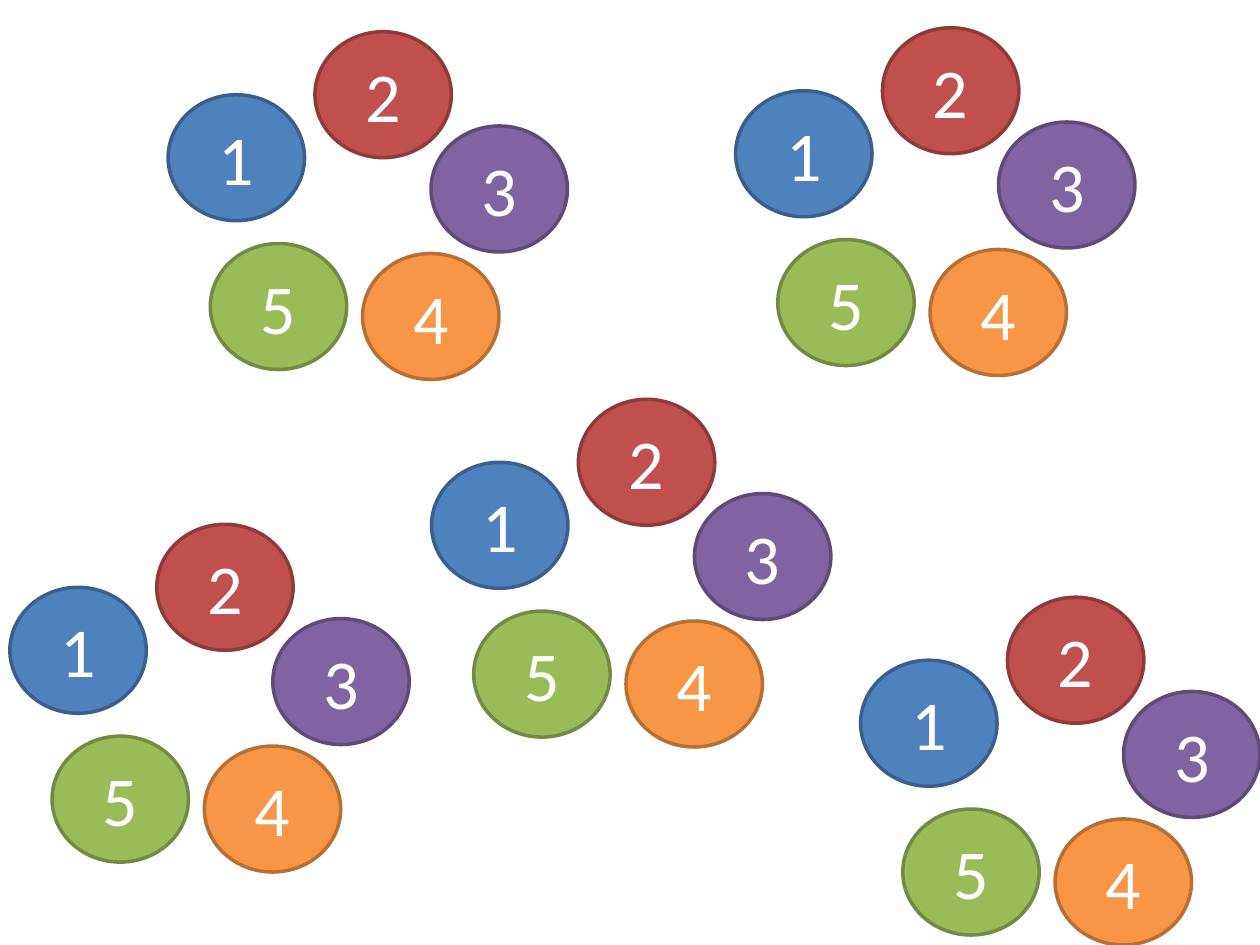
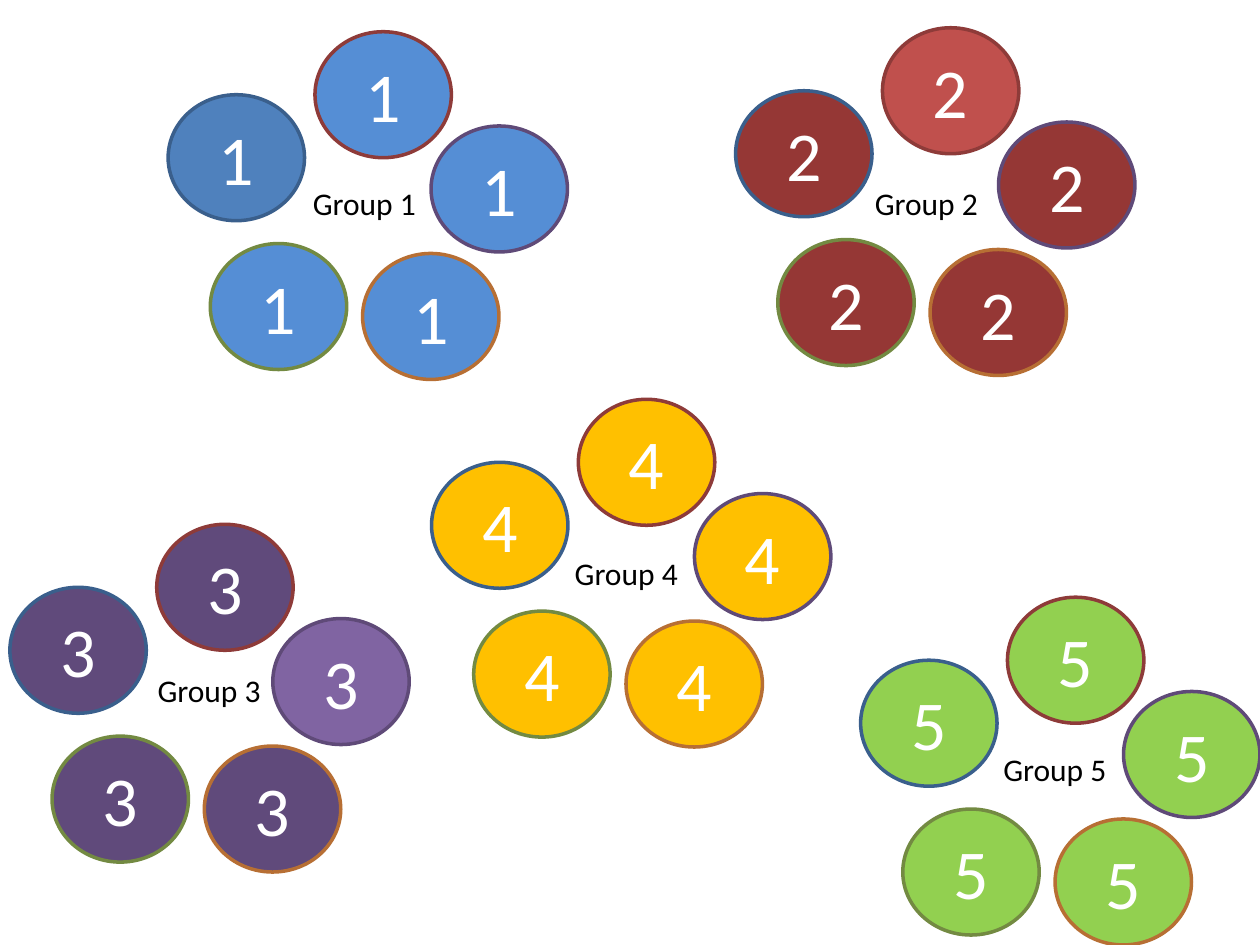
import pptx
import pptx.dml.color
import pptx.enum.shapes
import pptx.enum.text
import pptx.util

Cm = pptx.util.Cm
Pt = pptx.util.Pt

COLOURS = {
    "blue": "4F81BD", "red": "C0504D", "purple": "8064A2",
    "orange": "F79646", "green": "9BBB59",
    "blue rim": "3A5F8C", "red rim": "8E3B39", "purple rim": "5F4A78",
    "orange rim": "B76F34", "green rim": "738A42",
    "sky": "558ED5", "maroon": "953735", "plum": "604A7B",
    "amber": "FFC000", "lime": "92D050",
    "white": "FFFFFF", "black": "000000",
}
FONT = "Calibri"

MEMBERS = [
    {"number": 1, "colour": "blue", "offset": (0, 1.27)},
    {"number": 2, "colour": "red", "offset": (2.96, 0)},
    {"number": 3, "colour": "purple", "offset": (5.3, 1.9)},
    {"number": 4, "colour": "orange", "offset": (3.92, 4.47)},
    {"number": 5, "colour": "green", "offset": (0.85, 4.27)},
]
GROUPS = [
    {"number": 1, "corner": (3.39, 0.64), "label": (5.97, 3.58),
     "tint": "sky", "keeps_own": True},
    {"number": 2, "corner": (14.83, 0.56), "label": (17.3, 3.58),
     "tint": "maroon", "keeps_own": True},
    {"number": 3, "corner": (0.2, 10.57), "label": (2.84, 13.41),
     "tint": "plum", "keeps_own": True},
    {"number": 4, "corner": (8.7, 8.05), "label": (11.25, 11.05),
     "tint": "amber", "keeps_own": False},
    {"number": 5, "corner": (17.35, 12.04), "label": (19.89, 14.99),
     "tint": "lime", "keeps_own": False},
]

CIRCLE_WIDTH, CIRCLE_HEIGHT = 2.75, 2.54
NUMBER_HEIGHT = 1.96
LABEL_HEIGHT = 1.02


def rgb(colour):
    return pptx.dml.color.RGBColor.from_string(COLOURS[colour])


def write(slide, text, left, top, height, size, colour):
    box = slide.shapes.add_textbox(Cm(left), Cm(top), Cm(CIRCLE_WIDTH), Cm(height))
    frame = box.text_frame
    frame.word_wrap = True
    frame.auto_size = pptx.enum.text.MSO_AUTO_SIZE.SHAPE_TO_FIT_TEXT
    line = frame.paragraphs[0]
    line.alignment = pptx.enum.text.PP_ALIGN.CENTER
    run = line.add_run()
    run.text = text
    run.font.name = FONT
    run.font.size = Pt(size)
    run.font.color.rgb = rgb(colour)


def draw_member(slide, group, member, number, fill):
    left, top = (c + o for c, o in zip(group["corner"], member["offset"]))
    circle = slide.shapes.add_shape(
        pptx.enum.shapes.MSO_SHAPE.OVAL,
        Cm(left), Cm(top), Cm(CIRCLE_WIDTH), Cm(CIRCLE_HEIGHT))
    circle.shadow.inherit = False
    circle.fill.solid()
    circle.fill.fore_color.rgb = rgb(fill)
    circle.line.color.rgb = rgb(member["colour"] + " rim")
    circle.line.width = Pt(2)
    write(slide, str(number), left, top + (CIRCLE_HEIGHT - NUMBER_HEIGHT) / 2,
          height=NUMBER_HEIGHT, size=40, colour="white")


def build_mixed(slide):
    for group in GROUPS:
        for member in MEMBERS:
            draw_member(slide, group, member, member["number"], member["colour"])


def build_regrouped(slide):
    for group in GROUPS:
        for member in MEMBERS:
            stays = group["keeps_own"] and member["number"] == group["number"]
            fill = member["colour"] if stays else group["tint"]
            draw_member(slide, group, member, group["number"], fill)
    for group in GROUPS:
        write(slide, f"Group {group['number']}", *group["label"],
              height=LABEL_HEIGHT, size=18, colour="black")


def main():
    deck = pptx.Presentation()
    deck.slide_width, deck.slide_height = Cm(25.4), Cm(19.05)
    blank = deck.slide_layouts[6]
    for build in (build_mixed, build_regrouped):
        build(deck.slides.add_slide(blank))
    deck.save("out.pptx")


if __name__ == "__main__":
    main()
